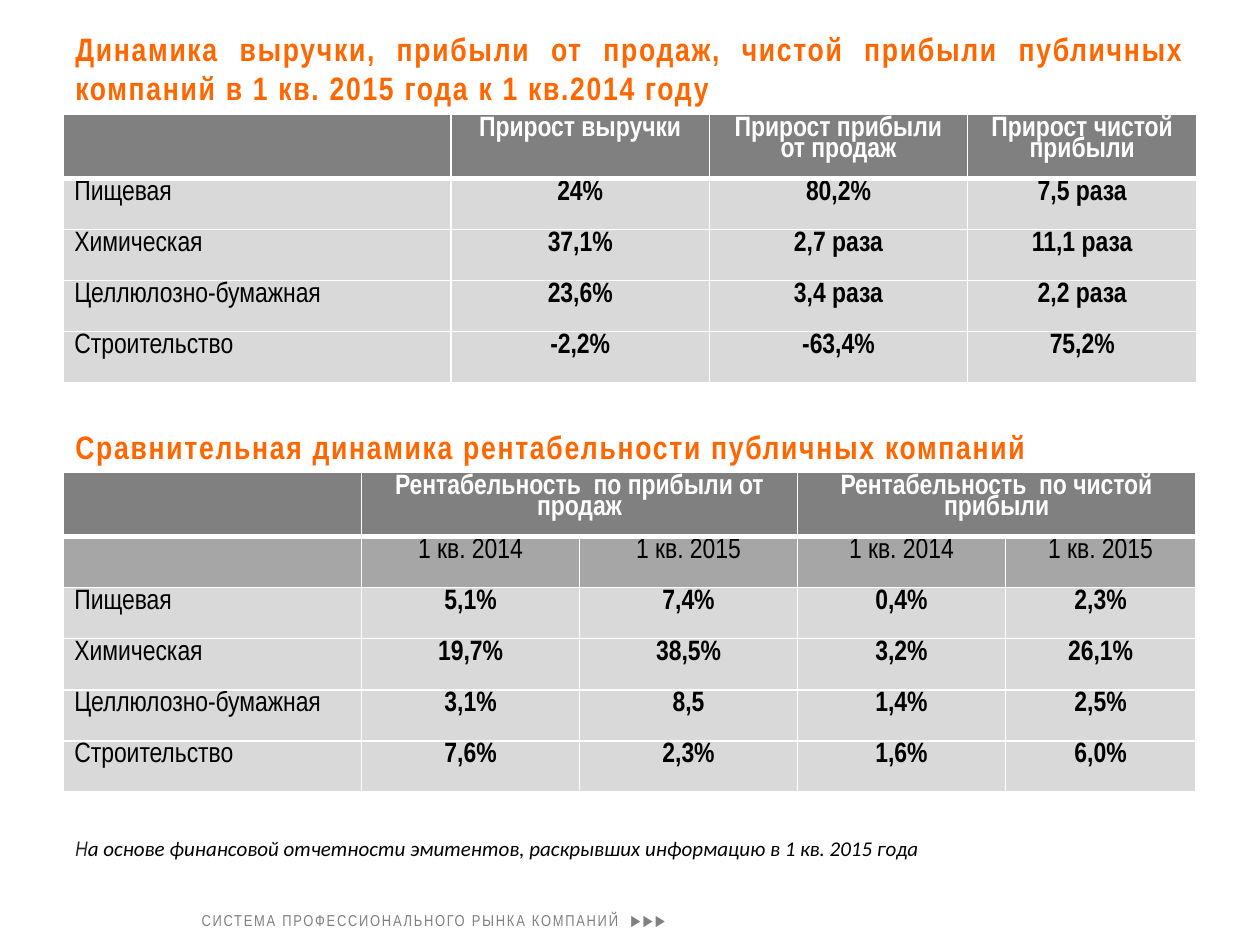
from lxml import etree
from pptx import Presentation
from pptx.dml.color import RGBColor
from pptx.enum import text
from pptx.oxml import ns
from pptx.util import Inches, Pt

NARROW = "Arial Narrow"
ORANGE, WHITE, BLACK = "FF6600", "FFFFFF", "000000"
DARK, MIDDLE, LIGHT = "808080", "A6A6A6", "D9D9D9"
HEADER_HEIGHT = 0.5
CENTER = text.PP_ALIGN.CENTER
TITLE = {"size": Pt(18.5), "bold": True, "color": ORANGE}
INDUSTRIES = ["Пищевая", "Химическая", "Целлюлозно-бумажная", "Строительство"]

GROWTH = [
    ["", "Прирост выручки", "Прирост прибыли от продаж", "Прирост чистой прибыли"],
    ["24%", "80,2%", "7,5 раза"],
    ["37,1%", "2,7 раза", "11,1 раза"],
    ["23,6%", "3,4 раза", "2,2 раза"],
    ["-2,2%", "-63,4%", "75,2%"],
]
MARGINS = [
    ["", "Рентабельность  по прибыли от продаж", "",
     "Рентабельность  по чистой прибыли", ""],
    ["", "1 кв. 2014", "1 кв. 2015", "1 кв. 2014", "1 кв. 2015"],
    ["5,1%", "7,4%", "0,4%", "2,3%"],
    ["19,7%", "38,5%", "3,2%", "26,1%"],
    ["3,1%", "8,5", "1,4%", "2,5%"],
    ["7,6%", "2,3%", "1,6%", "6,0%"],
]


def color(value):
    return RGBColor.from_string(value)


def set_font(font, **formats):
    font.color.rgb = color(formats.pop("color", BLACK))
    for name, value in {"name": NARROW, **formats}.items():
        setattr(font, name, value)


def add_span(para, words, spacing=0, **formats):
    """Add a run; spacing is the gap between letters in points."""
    span = para.add_run()
    span.text = words
    set_font(span.font, **formats)
    if spacing:
        span.font._element.set("spc", str(spacing * 100))


def add_box(page, box, anchor=text.MSO_ANCHOR.TOP, align=None, inset=0.1):
    """Add an empty text box and return its first paragraph."""
    frame = page.shapes.add_textbox(*map(Inches, box)).text_frame
    frame.word_wrap = True
    frame.vertical_anchor = anchor
    frame.margin_left = Inches(inset)
    para = frame.paragraphs[0]
    para.alignment = align
    return para


def add_title(page, box, words, align=None):
    para = add_box(page, box, text.MSO_ANCHOR.BOTTOM, align)
    add_span(para, words, spacing=1, **TITLE)


def add_borders(cell, bottom):
    properties = cell._tc.get_or_add_tcPr()
    for side, width in {"lnL": 1, "lnR": 1, "lnT": 1, "lnB": bottom}.items():
        line = etree.SubElement(properties, ns.qn(f"a:{side}"), w=str(Pt(width)))
        fill = etree.SubElement(line, ns.qn("a:solidFill"))
        etree.SubElement(fill, ns.qn("a:srgbClr"), val=WHITE)


def fill_cell(cell, words, fill, bottom=1, align=None, **formats):
    add_borders(cell, bottom)
    cell.fill.solid()
    cell.fill.fore_color.rgb = color(fill)
    cell.margin_left = cell.margin_right = Inches(0.09)
    cell.margin_top = cell.margin_bottom = Inches(0.04)
    para = cell.text_frame.paragraphs[0]
    para.alignment = align
    para.line_spacing = 0.8
    if words:
        add_span(para, words, size=Pt(16), **formats)
    else:
        set_font(para.font, size=Pt(16))


def add_data_table(page, box, widths, rows, subheads=0, merges=()):
    """Draw a header, subhead rows and one row of values for each industry."""
    table = page.shapes.add_table(len(rows), len(widths), *map(Inches, box)).table
    table.horz_banding = False
    for column, width in zip(table.columns, widths):
        column.width = Inches(width)
    body_height = (box[3] - HEADER_HEIGHT) / (len(rows) - 1)
    labeled = rows[:1 + subheads] + [
        [name, *values] for name, values in zip(INDUSTRIES, rows[1 + subheads:])]
    for i, values in enumerate(labeled):
        table.rows[i].height = Inches(body_height if i else HEADER_HEIGHT)
        for j, words in enumerate(values):
            if i == 0:
                style = {"fill": DARK, "bottom": 3, "color": WHITE, "bold": True}
            elif i <= subheads:
                style = {"fill": MIDDLE, "bold": False}
            else:
                style = {"fill": LIGHT, "bold": j > 0}
            fill_cell(table.cell(i, j), words, align=CENTER if j else None, **style)
    for first, last in merges:
        table.cell(0, first).merge(table.cell(0, last))


def add_source_note(page, box):
    para = add_box(page, box)
    add_span(para, "Н", size=Pt(12), italic=True, color="262626")
    add_span(para, "а основе финансовой отчетности эмитентов, раскрывших "
             "информацию в 1 кв. 2015 года",
             size=Pt(12), italic=True, name="Calibri")


def add_footer(page, box):
    para = add_box(page, box, text.MSO_ANCHOR.MIDDLE, inset=0.14)
    add_span(para, "СИСТЕМА ПРОФЕССИОНАЛЬНОГО РЫНКА КОМПАНИЙ  ▶▶▶",
             spacing=1, size=Pt(9), color=DARK)


def main():
    deck = Presentation()
    deck.slide_width, deck.slide_height = Inches(10), Inches(7.5)
    page = deck.slides.add_slide(deck.slide_layouts[6])
    add_footer(page, (1.46, 7.18, 5.43, 0.24))
    add_data_table(page, (0.5, 0.91, 9, 2.12), [3.08, 2.05, 2.05, 1.82], GROWTH)
    add_data_table(page, (0.5, 3.75, 9, 2.53), [2.37, 1.73, 1.73, 1.65, 1.51],
                   MARGINS, subheads=1, merges=[(1, 2), (3, 4)])
    add_title(page, (0.5, 0.2, 9, 0.7),
              "Динамика выручки, прибыли от продаж, чистой прибыли публичных "
              "компаний в 1 кв. 2015 года к 1 кв.2014 году",
              text.PP_ALIGN.JUSTIFY)
    add_title(page, (0.5, 3.36, 9, 0.39),
              "Сравнительная динамика рентабельности публичных компаний")
    add_source_note(page, (0.5, 6.58, 8.99, 0.3))
    deck.save("out.pptx")


if __name__ == "__main__":
    main()
